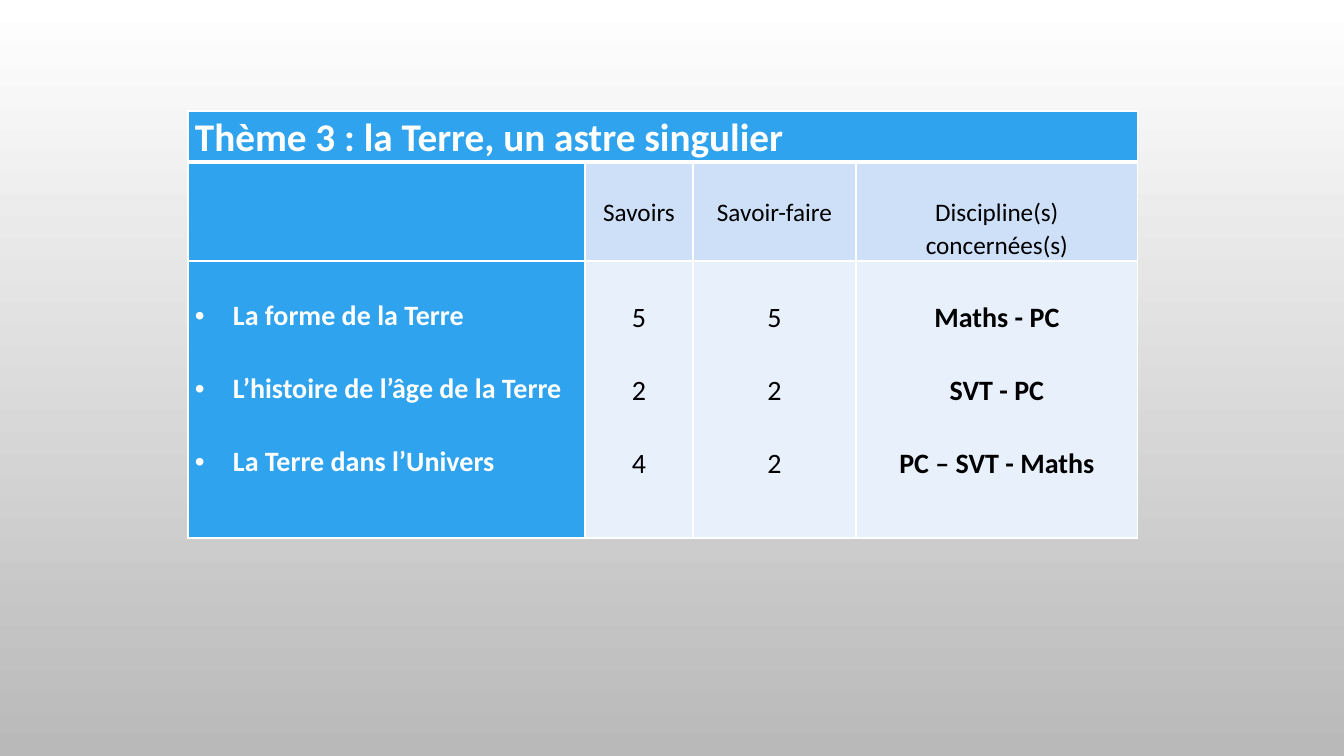
from lxml import etree
from pptx import Presentation
from pptx.dml.color import RGBColor
from pptx.enum.text import MSO_ANCHOR, PP_ALIGN
from pptx.oxml.ns import qn
from pptx.util import Emu, Pt

LEFT, CENTER = PP_ALIGN.LEFT, PP_ALIGN.CENTER
TOP = MSO_ANCHOR.TOP

FONT = "Calibri"
WHITE, BLACK, GREY = "FFFFFF", "000000", "B9B9B9"
BLUE, PALE, LIGHT = "2FA3EE", "CDE0F8", "E8F0FC"

COLS = [397, 108, 163, 282]
ROWS = [50, 97, 277]
TITLE = "Thème 3 : la Terre, un astre singulier"
HEADS = ["Savoirs", "Savoir-faire", "Discipline(s) concernées(s)"]
TOPICS = ["La forme de la Terre", "L’histoire de l’âge de la Terre",
          "La Terre dans l’Univers"]
SCORES = [["5", "2", "4"], ["5", "2", "2"]]
FIELDS = ["Maths - PC", "SVT - PC", "PC – SVT - Maths"]


def px(n):
    return Emu(round(n * 914400 / 100.8))


def rgb(code):
    return RGBColor.from_string(code)


def paint_back(slide):
    fill = slide.background.fill
    fill.gradient()
    fill.gradient_angle = 270
    for stop, code, pos in zip(fill.gradient_stops, (WHITE, GREY), (0, 1)):
        stop.color.rgb = rgb(code)
        stop.position = pos


def add_edge(cell, side, width):
    line = etree.SubElement(cell._tc.get_or_add_tcPr(), qn("a:ln" + side),
                            w=str(Pt(width)))
    fill = etree.SubElement(line, qn("a:solidFill"))
    etree.SubElement(fill, qn("a:srgbClr"), val=WHITE)


def style_cell(cell, code, widths):
    for side, width in zip("LRTB", widths):
        add_edge(cell, side, width)
    cell.fill.solid()
    cell.fill.fore_color.rgb = rgb(code)
    cell.margin_left = cell.margin_right = px(7)
    cell.margin_top = cell.margin_bottom = 0
    cell.vertical_anchor = TOP


def add_bullet(para):
    props = para._p.get_or_add_pPr()
    props.set("marL", str(px(38)))
    props.set("indent", str(-px(38)))
    etree.SubElement(props, qn("a:buFont"), typeface="Arial")
    etree.SubElement(props, qn("a:buChar"), char="•")


def write(cell, lines, size, color=BLACK, bold=False, align=CENTER,
          top=0, bullet=False):
    cell.margin_top = px(top)
    frame = cell.text_frame
    for i, line in enumerate(lines):
        para = frame.add_paragraph() if i else frame.paragraphs[0]
        if bullet:
            add_bullet(para)
        para.alignment = align
        para.line_spacing = 1.07
        if i:
            para.space_before = Pt(26)
        run = para.add_run()
        run.text = line
        font = run.font
        font.name, font.size, font.bold = FONT, Pt(size), bold
        font.color.rgb = rgb(color)


def add_grid(slide):
    frame = slide.shapes.add_table(len(ROWS), len(COLS), px(188), px(111),
                                   px(sum(COLS)), px(sum(ROWS)))
    table = frame.table
    table.first_row = table.horz_banding = False
    for col, width in zip(table.columns, COLS):
        col.width = px(width)
    for row, height in zip(table.rows, ROWS):
        row.height = px(height)
    for r, code in enumerate((BLUE, PALE, LIGHT)):
        # The rule under the title row is thicker
        widths = (1, 1, 3 if r == 1 else 1, 3 if r == 0 else 1)
        for c in range(len(COLS)):
            style_cell(table.cell(r, c), code if c else BLUE, widths)
    table.cell(0, 0).merge(table.cell(0, len(COLS) - 1))
    return table


def main():
    prs = Presentation()
    prs.slide_width, prs.slide_height = px(1344), px(756)
    slide = prs.slides.add_slide(prs.slide_layouts[6])
    paint_back(slide)
    table = add_grid(slide)

    # Title and column heads
    write(table.cell(0, 0), [TITLE], 28, WHITE, True, LEFT)
    for c, head in enumerate(HEADS, 1):
        write(table.cell(1, c), [head], 18, top=33)

    # Topics, scores and fields
    write(table.cell(2, 0), TOPICS, 20, WHITE, True, LEFT, 35, True)
    for c, marks in enumerate(SCORES, 1):
        write(table.cell(2, c), marks, 20, top=37)
    write(table.cell(2, 3), FIELDS, 20, bold=True, top=37)

    prs.save("out.pptx")


if __name__ == "__main__":
    main()
